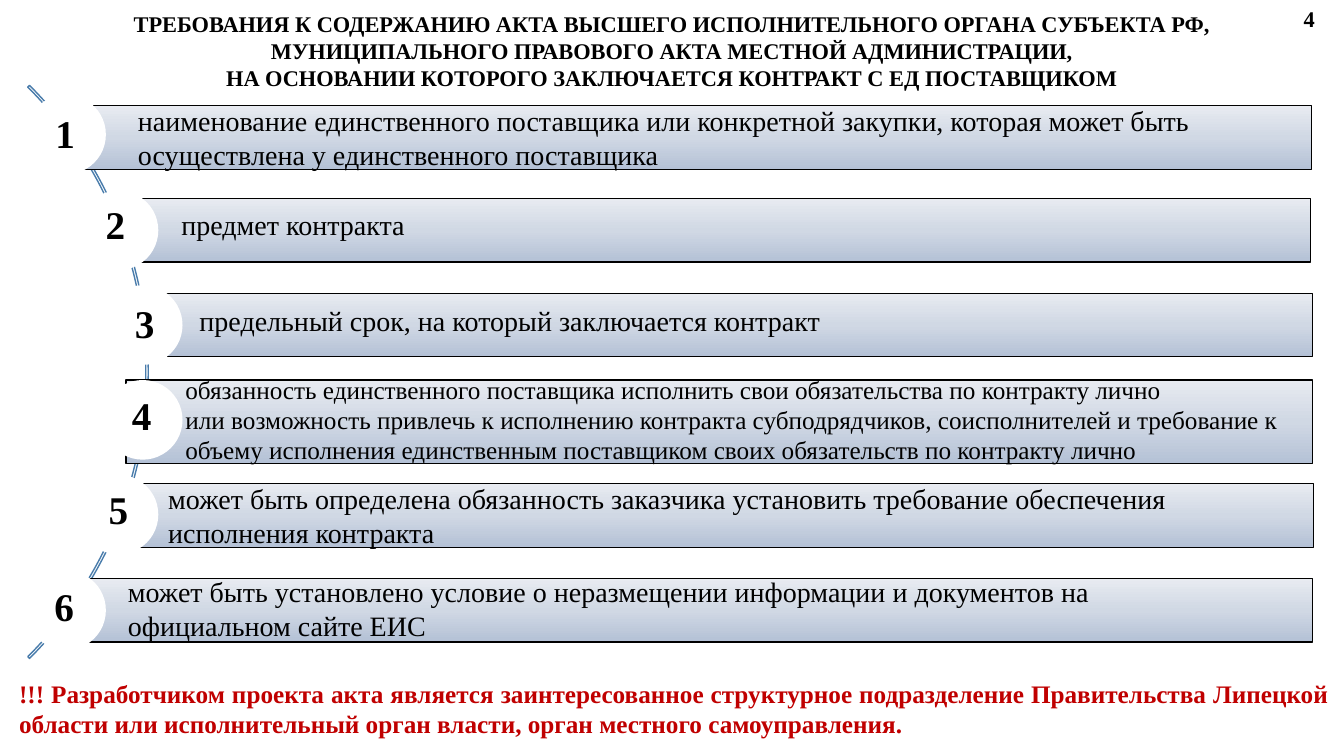
from copy import deepcopy
from dataclasses import dataclass

from pptx import Presentation
from pptx import util as u
from pptx.dml.color import RGBColor
from pptx.enum import shapes, text
from pptx.oxml import ns


@dataclass(frozen=True)
class Theme:
    font: str = "Times New Roman"
    ink: str = "000000"
    paper: str = "FFFFFF"
    alert: str = "C00000"
    arc: str = "497CAB"
    gradient: tuple = ("B4C1D6", "D0D8E4", "E8EBF1")
    heading: int = 16
    number: int = 28
    item: int = 20
    small: int = 18


class RequirementsSlide:
    def __init__(self, page, theme):
        self.page = page
        self.theme = theme

    def place(self, box, at):
        box.left, box.top, box.width, box.height = map(u.Inches, at)

    def set_lines(self, box, lines, size, color=None, bold=False, align=text.PP_ALIGN.LEFT):
        frame = box.text_frame
        frame.word_wrap = True
        frame.auto_size = text.MSO_AUTO_SIZE.NONE
        frame.text = "\n".join(lines)
        for para in frame.paragraphs:
            para.alignment = align
            for span in para.runs:
                span.font.name = self.theme.font
                span.font.size = u.Pt(size)
                span.font.bold = bold
                span.font.color.rgb = RGBColor.from_string(color or self.theme.ink)

    def title(self, at, lines):
        box = self.page.shapes.title
        self.place(box, at)
        self.set_lines(box, lines, self.theme.heading, bold=True, align=text.PP_ALIGN.CENTER)
        box.text_frame.vertical_anchor = text.MSO_ANCHOR.MIDDLE

    def label(self, at, lines, size, **style):
        box = self.page.shapes.add_textbox(*map(u.Inches, at))
        self.set_lines(box, lines, size, **style)

    def shape(self, kind, at, line=None):
        box = self.page.shapes.add_shape(kind, *map(u.Inches, at))
        box.shadow.inherit = False
        if line:
            box.line.color.rgb = RGBColor.from_string(line)
            box.line.width = u.Pt(1)
        else:
            box.line.fill.background()
        return box

    def arc(self, at):
        box = self.shape(shapes.MSO_SHAPE.BLOCK_ARC, at, self.theme.arc)
        box.fill.background()
        for index, value in enumerate((189, 27, 0.003)):
            box.adjustments[index] = value

    def bar(self, at):
        box = self.shape(shapes.MSO_SHAPE.RECTANGLE, at, self.theme.ink)
        box.fill.gradient()
        box.fill.gradient_angle = 90
        stops = box.element.spPr.find(".//" + ns.qn("a:gsLst"))
        stops.insert(1, deepcopy(stops[0]))
        for index, stop in enumerate(box.fill.gradient_stops):
            stop.position = index / 2
            stop.color.rgb = RGBColor.from_string(self.theme.gradient[index])

    def circle(self, left, top):
        box = self.shape(shapes.MSO_SHAPE.OVAL, (left, top, 0.79, 0.79))
        box.fill.solid()
        box.fill.fore_color.rgb = RGBColor.from_string(self.theme.paper)


TITLE = [
    "ТРЕБОВАНИЯ К СОДЕРЖАНИЮ АКТА ВЫСШЕГО ИСПОЛНИТЕЛЬНОГО ОРГАНА СУБЪЕКТА РФ,",
    "МУНИЦИПАЛЬНОГО ПРАВОВОГО АКТА МЕСТНОЙ АДМИНИСТРАЦИИ,",
    "НА ОСНОВАНИИ КОТОРОГО ЗАКЛЮЧАЕТСЯ КОНТРАКТ С ЕД ПОСТАВЩИКОМ",
]
NOTICE = (
    "!!! Разработчиком проекта акта является заинтересованное структурное подразделение "
    "Правительства Липецкой области или исполнительный орган власти, "
    "орган местного самоуправления."
)
REQUIREMENTS = [
    ((0.65, 1.05, 12.36, 0.63), (0.26, 0.94), (0.45, 1.04), (1.27, 0.98, 11.47, 0.77),
     ["наименование единственного поставщика или конкретной закупки, которая может быть "
      "осуществлена у единственного поставщика"]),
    ((1.19, 1.97, 11.81, 0.63), (0.78, 1.89), (0.95, 1.94), (1.7, 2.01, 8.68, 0.44),
     ["предмет контракта"]),
    ((1.41, 2.91, 11.61, 0.63), (1.02, 2.83), (1.24, 2.92), (1.88, 2.96, 8.8, 0.44),
     ["предельный срок, на который заключается контракт"]),
    ((1.25, 3.77, 11.77, 0.83), (1.02, 3.77), (1.21, 3.83), (1.74, 3.66, 11.28, 1.01),
     ["обязанность единственного поставщика исполнить свои обязательства по контракту лично",
      "или возможность привлечь к исполнению контракта субподрядчиков, соисполнителей "
      "и требование к объему исполнения единственным поставщиком своих обязательств "
      "по контракту лично"]),
    ((1.18, 4.8, 11.85, 0.63), (0.78, 4.71), (0.98, 4.77), (1.57, 4.73, 11.41, 0.77),
     ["может быть определена обязанность заказчика установить требование обеспечения "
      "исполнения контракта"]),
    ((0.66, 5.74, 12.36, 0.63), (0.26, 5.66), (0.44, 5.73), (1.17, 5.65, 11.41, 0.77),
     ["может быть установлено условие о неразмещении информации и документов на "
      "официальном сайте ЕИС"]),
]


def main():
    deck = Presentation()
    deck.slide_width, deck.slide_height = u.Inches(13.33), u.Inches(7.5)
    theme = Theme()
    slide = RequirementsSlide(deck.slides.add_slide(deck.slide_layouts[5]), theme)
    slide.title((0, -0.03, 13.33, 1.07), TITLE)
    slide.arc((-6.57, -0.33, 8.04, 8.04))
    for bar, circle, _, _, _ in REQUIREMENTS:
        slide.bar(bar)
        slide.circle(*circle)
    for number, (_, _, corner, area, lines) in enumerate(REQUIREMENTS, 1):
        slide.label((*corner, 0.42, 0.57), [str(number)], theme.number, bold=True)
        slide.label(area, lines, theme.item if len(lines) == 1 else theme.small)
    slide.label((0.09, 6.68, 13.19, 0.71), [NOTICE], theme.small,
                color=theme.alert, bold=True, align=text.PP_ALIGN.JUSTIFY)
    slide.label((12.83, 0, 0.41, 0.37), ["4"], theme.heading, bold=True)
    deck.save("out.pptx")


if __name__ == "__main__":
    main()
